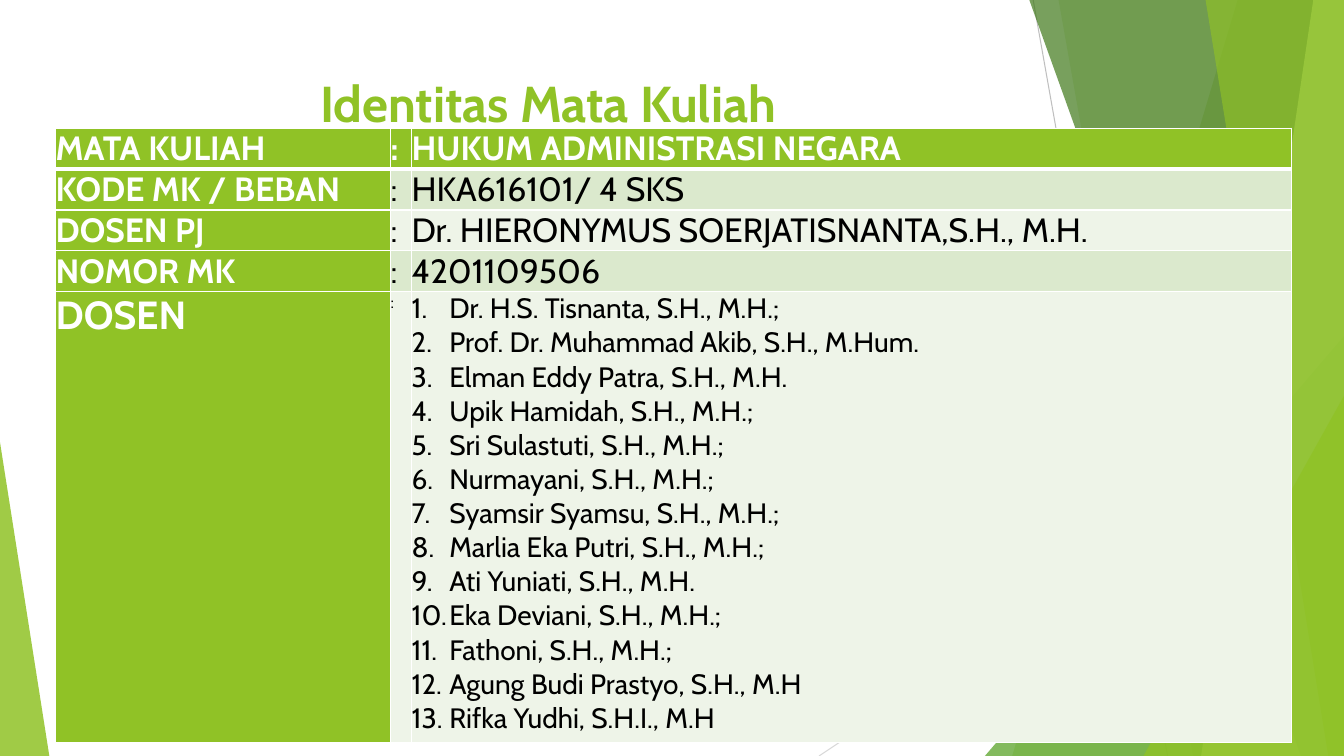
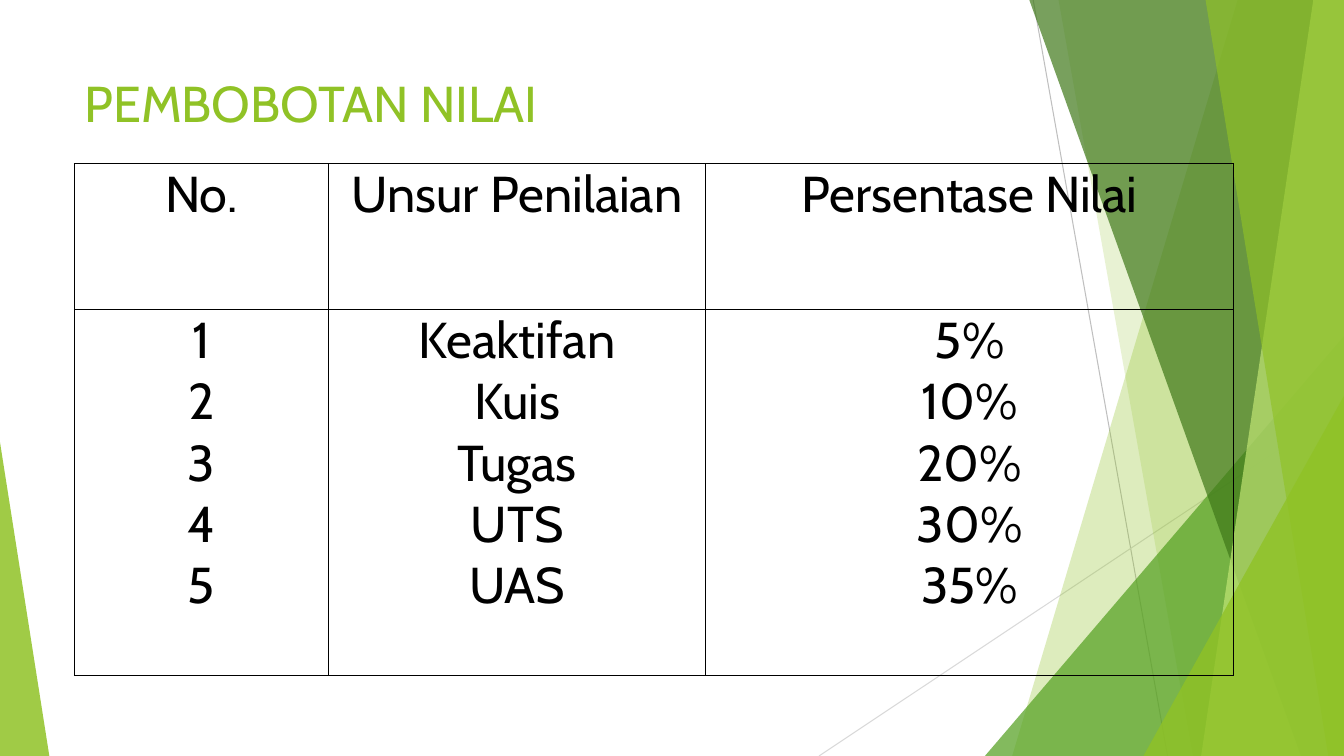
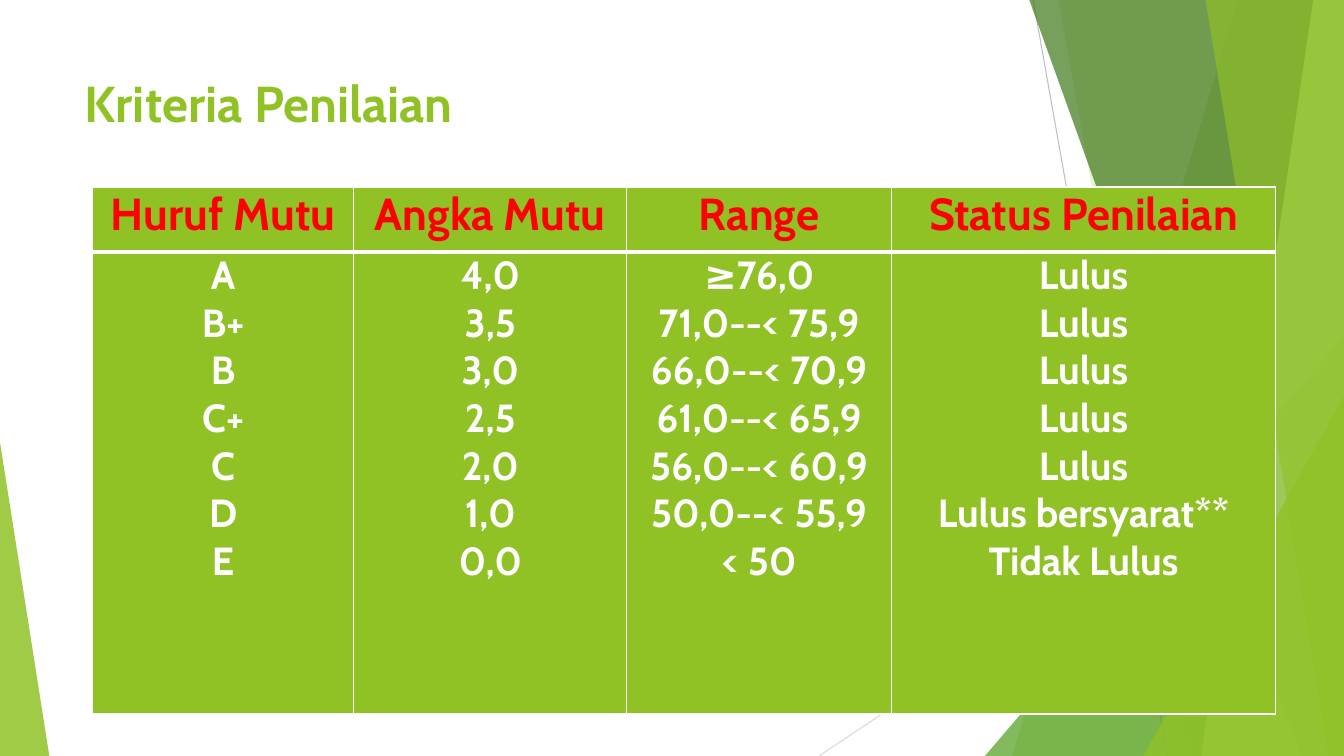
"""Build three slides on a law course: identity, grade weights and grade scale."""
from lxml.etree import SubElement
from pptx import Presentation
from pptx.dml.color import RGBColor
from pptx.enum.shapes import MSO_CONNECTOR, MSO_SHAPE
from pptx.enum.text import PP_ALIGN
from pptx.oxml.ns import qn
from pptx.util import Pt

PX = 9525
WIDE, HIGH = 1280, 720
FONT = "Cabin"
HUES = {
    "lime": "90C226", "leaf": "54A021", "pine": "3F7819", "pale": "C0E474",
    "gray": "BFBFBF", "mist": "D9D9D9", "white": "FFFFFF", "black": "000000",
    "red": "FF0000", "band": "DBE9CD", "soft": "EEF4E8",
}


def style(frame, size, hue, bold=False, align=PP_ALIGN.CENTER):
    """Format every paragraph and run of a text frame."""
    for para in frame.paragraphs:
        para.alignment = align
        for run in para.runs:
            run.font.name, run.font.size, run.font.bold = FONT, Pt(size), bold
            run.font.color.rgb = RGBColor.from_string(HUES[hue])


def grid(slide, left, top, cols, rows, texts, hue, rule=1, inset=7):
    """Add a bordered table; rule is the line width under its first row."""
    frame = slide.shapes.add_table(len(rows), len(cols), left * PX, top * PX,
                                   sum(cols) * PX, sum(rows) * PX)
    table = frame.table
    table.first_row = table.horz_banding = False
    for col, width in zip(table.columns, cols):
        col.width = width * PX
    for r, height in enumerate(rows):
        table.rows[r].height = height * PX
        for c, text in enumerate(texts[r]):
            cell = table.cell(r, c)
            cell.margin_left = cell.margin_right = inset * PX
            cell.margin_top = cell.margin_bottom = 0
            cell.text_frame.text = text
            props = cell._tc.get_or_add_tcPr()
            for side in "LRTB":
                thick = rule if (r, side) in [(0, "B"), (1, "T")] else 1
                line = SubElement(props, qn(f"a:ln{side}"), w=str(Pt(thick)))
                fill = SubElement(line, qn("a:solidFill"))
                SubElement(fill, qn("a:srgbClr"), val=HUES[hue])
            cell.fill.background()
    return table


deck = Presentation()
deck.slide_width, deck.slide_height = WIDE * PX, HIGH * PX

lines = [(984, 0, 1112, HIGH, "gray"), (WIDE, 387, 780, HIGH, "mist")]
facets = [
    ("quad", (1179, 964), "lime", 30),
    ("quad", (1008, 1136), "lime", 20),
    ("peak", (938, 320, 342, 400, 1), "leaf", 72),
    ("quad", (980, 1239), "pine", 70),
    ("quad", (1251, 1144), "pale", 70),
    ("quad", (1148, 1265), "lime", 65),
    ("peak", (1089, 377, 191, 343, 1), "lime", 80),
    ("peak", (0, 421, 47, 299, 0), "lime", 85),
]
titles = [
    ("Identitas Mata Kuliah", True, PP_ALIGN.CENTER),
    ("PEMBOBOTAN NILAI", False, PP_ALIGN.LEFT),
    ("Kriteria Penilaian", True, PP_ALIGN.LEFT),
]
slides = []
for title, bold, align in titles:
    slide = deck.slides.add_slide(deck.slide_layouts[6])
    slides.append(slide)
    for x1, y1, x2, y2, hue in lines:
        line = slide.shapes.add_connector(MSO_CONNECTOR.STRAIGHT, x1 * PX, y1 * PX,
                                          x2 * PX, y2 * PX)
        line.line.color.rgb = RGBColor.from_string(HUES[hue])
        line.line.width = Pt(0.75)
        SubElement(line._element.spPr, qn("a:effectLst"))
    for kind, place, hue, alpha in facets:
        if kind == "quad":
            upper, lower = place
            pen = slide.shapes.build_freeform(upper, -1, scale=PX)
            pen.add_line_segments([(WIDE, -1), (WIDE, HIGH), (lower, HIGH)])
            facet = pen.convert_to_shape()
        else:
            facet = slide.shapes.add_shape(MSO_SHAPE.ISOSCELES_TRIANGLE,
                                           *[n * PX for n in place[:4]])
            facet.adjustments[0] = place[4]
        facet.shadow.inherit = False
        facet.line.fill.background()
        facet.fill.solid()
        facet.fill.fore_color.rgb = RGBColor.from_string(HUES[hue])
        color = facet._element.spPr.find(".//" + qn("a:srgbClr"))
        SubElement(color, qn("a:alpha"), val=str(alpha * 1000))
    box = slide.shapes.add_textbox(71 * PX, 64 * PX, 902 * PX, 138 * PX)
    box.text_frame.word_wrap = True
    box.text_frame.text = title
    style(box.text_frame, 36, "lime", bold, align)

staff = [
    "Dr. H.S. Tisnanta, S.H., M.H.;",
    "Prof. Dr. Muhammad Akib, S.H., M.Hum.",
    "Elman Eddy Patra, S.H., M.H.",
    "Upik Hamidah, S.H., M.H.;",
    "Sri Sulastuti, S.H., M.H.;",
    "Nurmayani, S.H., M.H.;",
    "Syamsir Syamsu, S.H., M.H.;",
    "Marlia Eka Putri, S.H., M.H.;",
    "Ati Yuniati, S.H., M.H.",
    "Eka Deviani, S.H., M.H.;",
    "Fathoni, S.H., M.H.;",
    "Agung Budi Prastyo, S.H., M.H",
    "Rifka Yudhi, S.H.I., M.H",
]
facts = [
    ("MATA KULIAH", ":", "HUKUM ADMINISTRASI NEGARA"),
    ("KODE MK / BEBAN", ":", "HKA616101/ 4 SKS"),
    ("DOSEN PJ", ":", "Dr. HIERONYMUS SOERJATISNANTA,S.H., M.H."),
    ("NOMOR MK", ":", "4201109506"),
    ("DOSEN", ":", "\n".join(staff)),
]
table = grid(slides[0], 53, 122, [319, 20, 838], [39] * 4 + [429], facts,
             "white", rule=3, inset=0)
for r in range(len(facts)):
    sizes = (28, 12, 20) if r == 4 else (24, 24, 24)
    for c, size in enumerate(sizes):
        cell = table.cell(r, c)
        head = r == 0 or c == 0
        fill = "lime" if head else "band" if r % 2 else "soft"
        cell.fill.solid()
        cell.fill.fore_color.rgb = RGBColor.from_string(HUES[fill])
        style(cell.text_frame, size, "white" if head else "black", head,
              PP_ALIGN.LEFT if size == 20 else PP_ALIGN.JUSTIFY)
for para in table.cell(4, 2).text_frame.paragraphs:
    props = para._p.get_or_add_pPr()
    props.set("marL", str(36 * PX))
    props.set("indent", str(-36 * PX))
    SubElement(props, qn("a:buFont"), typeface="+mj-lt")
    SubElement(props, qn("a:buAutoNum"), type="arabicPeriod")

weights = [
    ("No.", "Unsur Penilaian", "Persentase Nilai"),
    ("1\n2\n3\n4\n5", "Keaktifan\nKuis\nTugas\nUTS\nUAS", "5%\n10%\n20%\n30%\n35%"),
]
table = grid(slides[1], 71, 156, [242, 359, 503], [139, 348], weights, "black")
for cell in table.iter_cells():
    style(cell.text_frame, 36, "black")

marks = [
    ("A", "4,0", "≥76,0", "Lulus"),
    ("B+", "3,5", "71,0--< 75,9", "Lulus"),
    ("B", "3,0", "66,0--< 70,9", "Lulus"),
    ("C+", "2,5", "61,0--< 65,9", "Lulus"),
    ("C", "2,0", "56,0--< 60,9", "Lulus"),
    ("D", "1,0", "50,0--< 55,9", "Lulus bersyarat**"),
    ("E", "0,0", "< 50", "Tidak Lulus"),
]
scale = [
    ("Huruf Mutu", "Angka Mutu", "Range", "Status Penilaian"),
    ["\n".join(col) for col in zip(*marks)],
]
table = grid(slides[2], 88, 178, [249, 260, 252, 366], [62, 440], scale,
             "white", rule=3)
for r, (size, hue) in enumerate([(32, "red"), (28, "white")]):
    for cell in table.rows[r].cells:
        cell.fill.solid()
        cell.fill.fore_color.rgb = RGBColor.from_string(HUES["lime"])
        style(cell.text_frame, size, hue, True)

deck.save("out.pptx")
